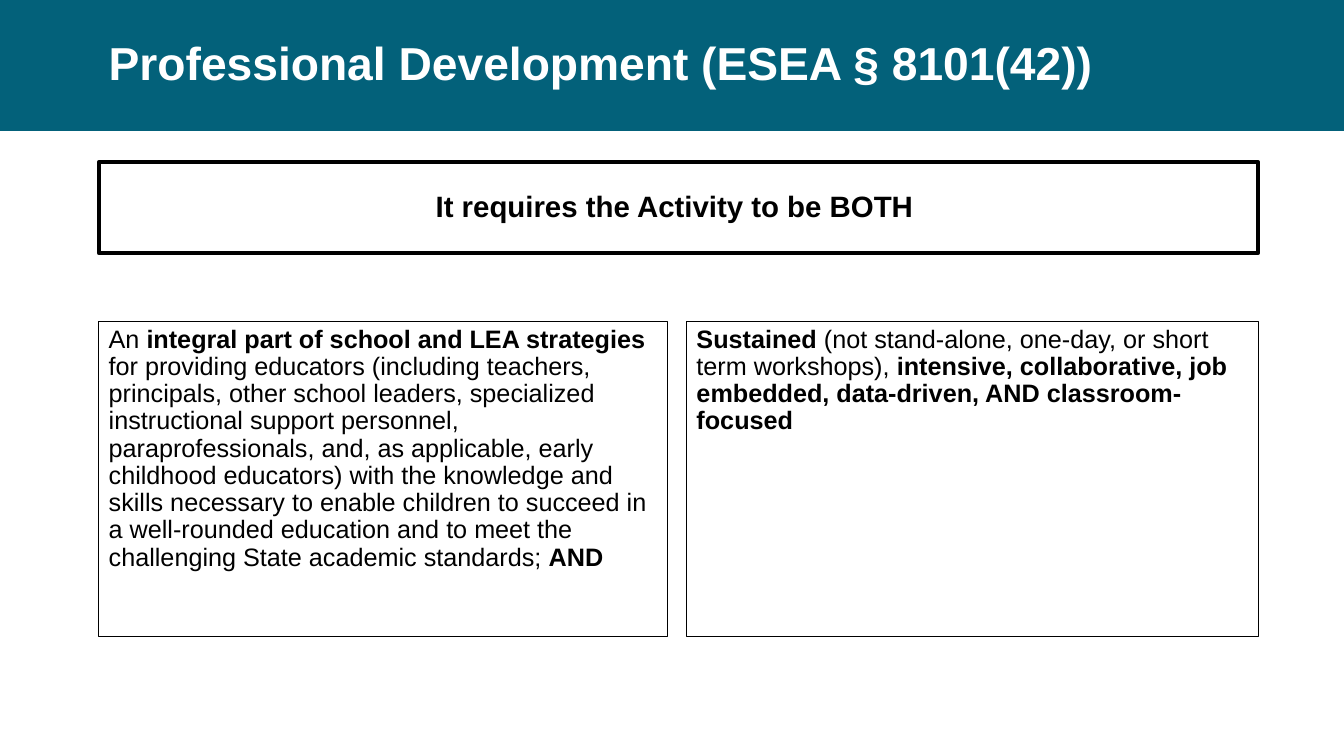
"""Build the Professional Development slide with its two requirement boxes."""
import pptx
import pptx.util
from pptx.dml.color import RGBColor
from pptx.enum.shapes import MSO_SHAPE
from pptx.enum.text import MSO_ANCHOR, PP_ALIGN

TEAL = RGBColor(0x03, 0x61, 0x7A)
WHITE = RGBColor(0xFF, 0xFF, 0xFF)
BLACK = RGBColor(0x00, 0x00, 0x00)

SLIDE_WIDTH, SLIDE_HEIGHT = 13.33, 7.5
LEFT, CONTENT_WIDTH = 0.98, 11.5
RIGHT = LEFT + CONTENT_WIDTH
BAND_HEIGHT = 1.3
COLUMN_TOP, COLUMN_HEIGHT = 3.19, 3.12
FIRST_WIDTH, GUTTER = 5.64, 0.19
SECOND_LEFT = LEFT + FIRST_WIDTH + GUTTER

TITLE = [("Professional Development (ESEA § 8101(42))", True)]
REQUIREMENT = [("It requires the Activity to be BOTH ", True)]
INTEGRAL = [
    ("An ", False),
    ("integral part of school and LEA strategies", True),
    (" for providing educators (including teachers, principals, other school "
     "leaders, specialized instructional support personnel, paraprofessionals, "
     "and, as applicable, early childhood educators) with the knowledge and "
     "skills necessary to enable children to succeed in a well-rounded education "
     "and to meet the challenging State academic standards; ", False),
    ("AND", True),
]
SUSTAINED = [
    ("Sustained", True),
    (" (not stand-alone, one-day, or short term workshops), ", False),
    ("intensive, collaborative, job embedded, data-driven, AND "
     "classroom-focused", True),
]


def inches(*lengths):
    """Convert lengths in inches to slide units."""
    return [pptx.util.Inches(length) for length in lengths]


def add_band(slide):
    """Draw the coloured band behind the title."""
    band = slide.shapes.add_shape(
        MSO_SHAPE.RECTANGLE, *inches(0, 0, SLIDE_WIDTH, BAND_HEIGHT))
    band.shadow.inherit = False
    band.fill.solid()
    band.fill.fore_color.rgb = TEAL
    band.line.fill.background()


def add_text(slide, box, pieces, size, color=BLACK, anchor=MSO_ANCHOR.TOP,
             alignment=PP_ALIGN.LEFT, border=None):
    """Add a text box of plain and bold pieces, with an optional border."""
    shape = slide.shapes.add_textbox(*inches(*box))
    if border:
        shape.line.color.rgb = BLACK
        shape.line.width = pptx.util.Pt(border)
    frame = shape.text_frame
    frame.word_wrap = True
    frame.vertical_anchor = anchor
    paragraph = frame.paragraphs[0]
    paragraph.alignment = alignment
    paragraph.line_spacing = 0.9
    for text, bold in pieces:
        run = paragraph.add_run()
        run.text = text
        run.font.name = "Arial"
        run.font.size = pptx.util.Pt(size)
        run.font.bold = bold
        run.font.color.rgb = color


def main():
    """Build and save the presentation."""
    presentation = pptx.Presentation()
    presentation.slide_width, presentation.slide_height = inches(
        SLIDE_WIDTH, SLIDE_HEIGHT)
    slide = presentation.slides.add_slide(presentation.slide_layouts[6])
    add_band(slide)
    add_text(slide, (LEFT, 0, CONTENT_WIDTH, BAND_HEIGHT), TITLE, 33, WHITE,
             MSO_ANCHOR.MIDDLE)
    add_text(slide, (LEFT, 1.61, CONTENT_WIDTH, 0.9), REQUIREMENT, 21,
             anchor=MSO_ANCHOR.MIDDLE, alignment=PP_ALIGN.CENTER, border=3)
    columns = [(LEFT, FIRST_WIDTH, INTEGRAL),
               (SECOND_LEFT, RIGHT - SECOND_LEFT, SUSTAINED)]
    for left, width, pieces in columns:
        add_text(slide, (left, COLUMN_TOP, width, COLUMN_HEIGHT), pieces, 18,
                 border=0.75)
    presentation.save("out.pptx")


if __name__ == "__main__":
    main()
